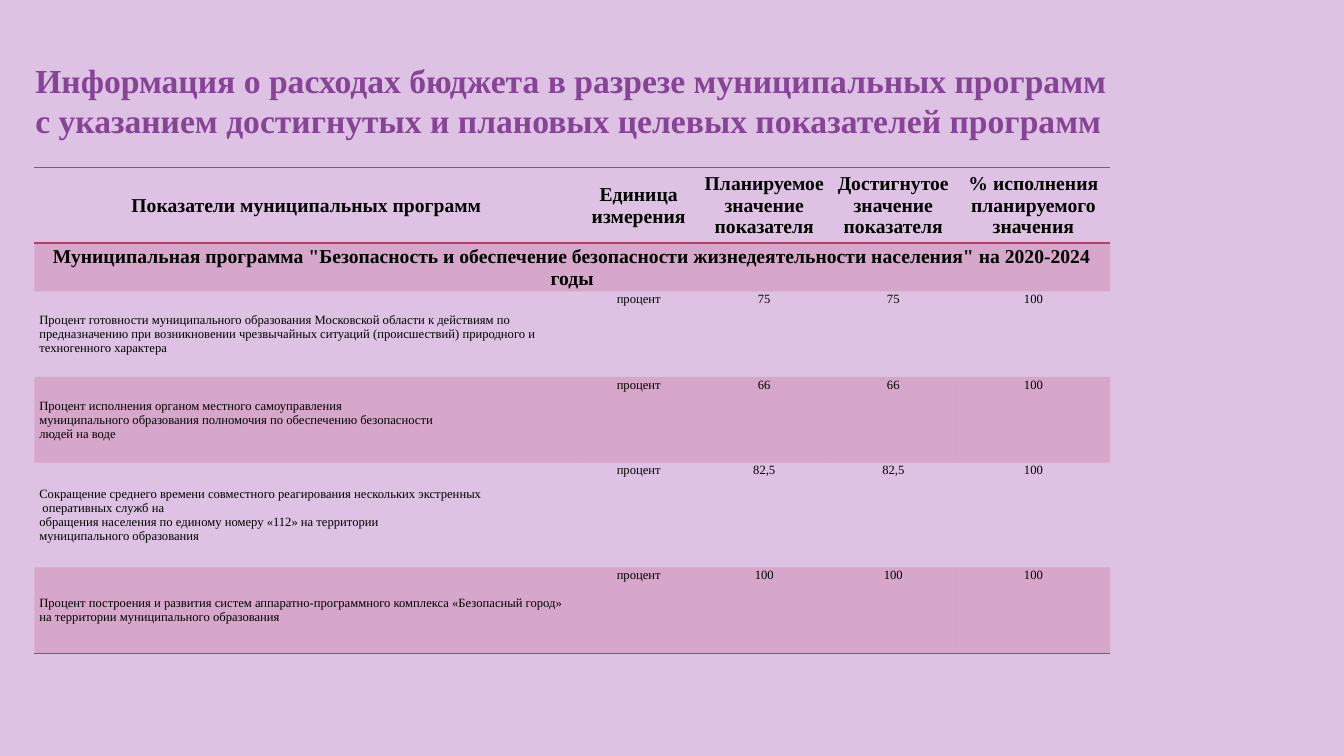
from dataclasses import dataclass

from lxml import etree
from pptx import Presentation
from pptx.dml.color import RGBColor
from pptx.enum.text import MSO_ANCHOR, MSO_AUTO_SIZE, PP_ALIGN
from pptx.oxml.ns import qn
from pptx.util import Inches, Pt

TOP, MIDDLE = MSO_ANCHOR.TOP, MSO_ANCHOR.MIDDLE
LEFT, CENTER = PP_ALIGN.LEFT, PP_ALIGN.CENTER
FIT_SHAPE = MSO_AUTO_SIZE.SHAPE_TO_FIT_TEXT

FONT = "Times New Roman"
ACCENT = "B83D68"
BAND_OPACITY = 20
PLAIN_STYLE = "{2D5ABB26-0587-4C30-8999-92F81FD0307C}"
COLUMN_WIDTHS = (5.4, 1.19, 1.3, 1.26, 1.52)

TITLE = (
    "Информация о расходах бюджета в разрезе муниципальных программ \n"
    "с указанием достигнутых и плановых целевых показателей программ"
)


@dataclass(frozen=True)
class TextFormat:
    size: float
    bold: bool
    align: PP_ALIGN
    anchor: MSO_ANCHOR
    inset: float = 0.01
    bottom: float = 0
    color: str = "000000"


@dataclass(frozen=True)
class TableRow:
    height: float
    texts: tuple[str, ...]
    formats: tuple[TextFormat, ...]
    banded: bool = False
    borders: tuple[str, ...] = ()


TITLE_FORMAT = TextFormat(24, True, LEFT, TOP, 0.1, 0.05, "874396")
HEADING = TextFormat(14, True, CENTER, MIDDLE)
INDICATOR = TextFormat(9, False, LEFT, MIDDLE, 0.05, 0.05)
VALUE = TextFormat(9, False, CENTER, TOP)
HEADINGS = (HEADING,) * 5
MEASURES = (INDICATOR,) + (VALUE,) * 4

ROWS = (
    TableRow(0.75, (
        "Показатели муниципальных программ",
        "Единица измерения",
        "Планируемое значение показателя",
        "Достигнутое значение показателя",
        "% исполнения планируемого значения",
    ), HEADINGS, borders=("lnT", "lnB")),
    TableRow(0.48, (
        'Муниципальная программа "Безопасность и обеспечение безопасности '
        'жизнедеятельности населения" на 2020-2024 годы',
    ), HEADINGS, banded=True),
    TableRow(0.85, (
        "Процент готовности муниципального образования Московской области к действиям по "
        "предназначению при возникновении чрезвычайных ситуаций (происшествий) природного "
        "и техногенного характера",
        "процент", "75", "75", "100",
    ), MEASURES),
    TableRow(0.85, (
        "Процент исполнения органом местного самоуправления \n"
        "муниципального образования полномочия по обеспечению безопасности \n"
        "людей на воде",
        "процент", "66", "66", "100",
    ), MEASURES, banded=True),
    TableRow(1.04, (
        "Сокращение среднего времени совместного реагирования нескольких экстренных\n"
        " оперативных служб на \n"
        "обращения населения по единому номеру «112» на территории \n"
        "муниципального образования",
        "процент", "82,5", "82,5", "100",
    ), MEASURES),
    TableRow(0.85, (
        "Процент построения и развития систем аппаратно-программного комплекса "
        "«Безопасный город» на территории муниципального образования",
        "процент", "100", "100", "100",
    ), MEASURES, banded=True, borders=("lnB",)),
)


def paint(fill, color: str) -> None:
    fill.solid()
    fill.fore_color.rgb = RGBColor.from_string(color)


def write(holder, frame, text: str, style: TextFormat) -> None:
    layout = {
        "margin_left": Inches(style.inset),
        "margin_right": Inches(style.inset),
        "margin_top": Inches(min(style.inset, 0.05)),
        "margin_bottom": Inches(style.bottom),
        "vertical_anchor": style.anchor,
        "word_wrap": True,
    }
    for name, value in layout.items():
        setattr(holder if hasattr(holder, name) else frame, name, value)
    paragraph = frame.paragraphs[0]
    paragraph.text = text
    paragraph.alignment = style.align
    lettering = {"name": FONT, "size": Pt(style.size), "bold": style.bold}
    for run in paragraph.runs:
        for name, value in lettering.items():
            setattr(run.font, name, value)
        paint(run.font.fill, style.color)


def band(cell) -> None:
    paint(cell.fill, ACCENT)
    color = cell._tc.tcPr.find(".//" + qn("a:srgbClr"))
    etree.SubElement(color, qn("a:alpha"), val=str(BAND_OPACITY * 1000))


def rule_cell(cell, borders: tuple[str, ...]) -> None:
    properties = cell._tc.get_or_add_tcPr()
    for position, side in enumerate(borders):
        line = etree.Element(qn(f"a:{side}"), w=str(Pt(1)))
        fill = etree.SubElement(line, qn("a:solidFill"))
        etree.SubElement(fill, qn("a:srgbClr"), val=ACCENT)
        properties.insert(position, line)


def add_indicators(slide) -> None:
    width = sum(COLUMN_WIDTHS)
    height = sum(row.height for row in ROWS)
    table = slide.shapes.add_table(
        len(ROWS), len(COLUMN_WIDTHS),
        Inches(0.34), Inches(1.66), Inches(width), Inches(height),
    ).table
    table.first_row = table.horz_banding = False
    table._tbl.tblPr.find(qn("a:tableStyleId")).text = PLAIN_STYLE
    for column, column_width in zip(table.columns, COLUMN_WIDTHS):
        column.width = Inches(column_width)
    for index, row in enumerate(ROWS):
        table.rows[index].height = Inches(row.height)
        if len(row.texts) == 1:
            table.cell(index, 0).merge(table.cell(index, len(COLUMN_WIDTHS) - 1))
        for column, (text, style) in enumerate(zip(row.texts, row.formats)):
            cell = table.cell(index, column)
            write(cell, cell.text_frame, text, style)
            if row.banded:
                band(cell)
            else:
                cell.fill.background()
            rule_cell(cell, row.borders)


def main() -> None:
    deck = Presentation()
    deck.slide_width, deck.slide_height = Inches(13.33), Inches(7.5)
    slide = deck.slides.add_slide(deck.slide_layouts[5])
    paint(slide.background.fill, "DEC2E4")
    title = slide.shapes.title
    bounds = {"left": 0.25, "top": 0.54, "width": 11.14, "height": 0.91}
    for name, value in bounds.items():
        setattr(title, name, Inches(value))
    write(title.text_frame, title.text_frame, TITLE, TITLE_FORMAT)
    title.text_frame.auto_size = FIT_SHAPE
    add_indicators(slide)
    deck.save("out.pptx")


if __name__ == "__main__":
    main()
